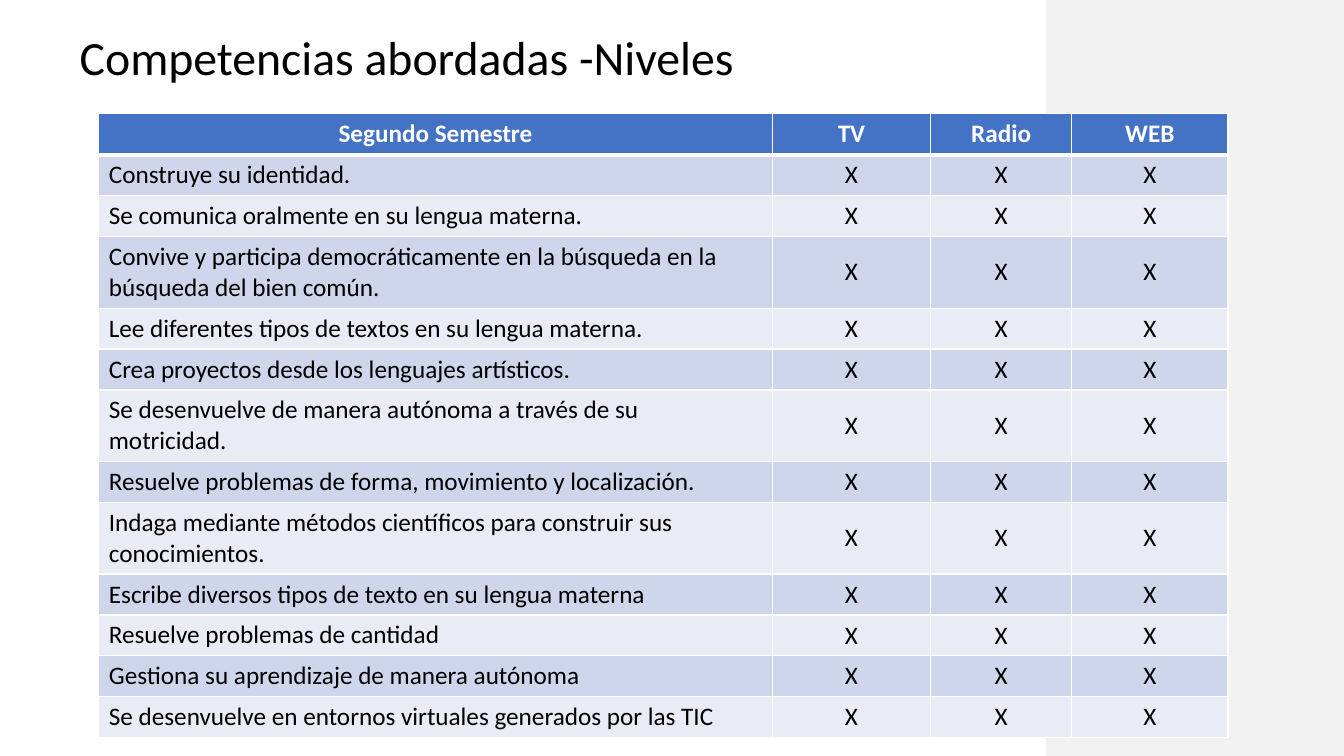
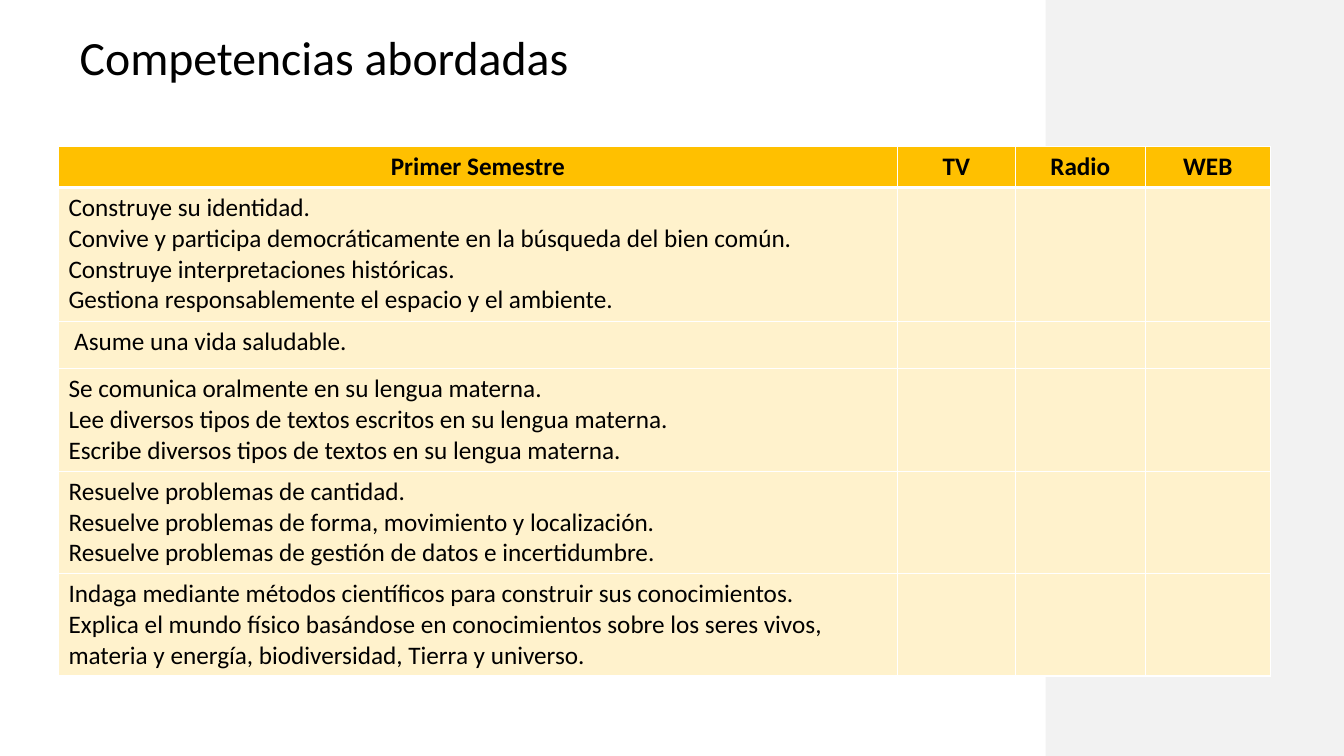
from lxml.etree import SubElement
from pptx import Presentation
from pptx.dml.color import RGBColor
from pptx.enum.shapes import MSO_SHAPE
from pptx.enum.text import MSO_ANCHOR, MSO_AUTO_SIZE, PP_ALIGN
from pptx.oxml.ns import qn
from pptx.util import Inches, Pt

# Shared look
FONT = "Calibri"
BLACK, WHITE, GREY = "000000", "FFFFFF", "F2F2F2"
BAND = (10.37, 0, 2.96, 7.5)
TITLE = (0.69, 0.36, 11.5, 0.53)
MEDIA = ["TV", "Radio", "WEB"]

# Second semester: one skill a row, all marked
SECOND = [
    "Construye su identidad.",
    "Se comunica oralmente en su lengua materna.",
    "Convive y participa democráticamente en la búsqueda en la búsqueda del bien común.",
    "Lee diferentes tipos de textos en su lengua materna.",
    "Crea proyectos desde los lenguajes artísticos.",
    "Se desenvuelve de manera autónoma a través de su motricidad.",
    "Resuelve problemas de forma, movimiento y localización.",
    "Indaga mediante métodos científicos para construir sus conocimientos.",
    "Escribe diversos tipos de texto en su lengua materna",
    "Resuelve problemas de cantidad",
    "Gestiona su aprendizaje de manera autónoma",
    "Se desenvuelve en entornos virtuales generados por las TIC",
]

# First semester: skills grouped by area, no marks
FIRST = [
    ["Construye su identidad.",
     "Convive y participa democráticamente en la búsqueda del bien común.",
     "Construye interpretaciones históricas.",
     "Gestiona responsablemente el espacio y el ambiente."],
    [" Asume una vida saludable."],
    ["Se comunica oralmente en su lengua materna.",
     "Lee diversos tipos de textos escritos en su lengua materna.",
     "Escribe diversos tipos de textos en su lengua materna."],
    ["Resuelve problemas de cantidad.",
     "Resuelve problemas de forma, movimiento y localización.",
     "Resuelve problemas de gestión de datos e incertidumbre."],
    ["Indaga mediante métodos científicos para construir sus conocimientos.",
     "Explica el mundo físico basándose en conocimientos sobre los seres vivos, "
     "materia y energía, biodiversidad, Tierra y universo."],
]


def paint(target, color):
    """Fill a shape or a cell."""
    target.fill.solid()
    target.fill.fore_color.rgb = RGBColor.from_string(color)


def write(par, text, size, color=BLACK, bold=False, align=PP_ALIGN.LEFT):
    par.alignment = align
    run = par.add_run()
    run.text = text
    font = run.font
    font.name, font.size, font.bold = FONT, Pt(size), bold
    font.color.rgb = RGBColor.from_string(color)


def border(cell, top, bottom):
    """White cell borders; top and bottom widths in points."""
    props = cell._tc.get_or_add_tcPr()
    sides = [("lnL", 1), ("lnR", 1), ("lnT", top), ("lnB", bottom)]
    for spot, (side, width) in enumerate(sides):
        line = SubElement(props, qn(f"a:{side}"), w=str(Pt(width)))
        fill = SubElement(line, qn("a:solidFill"))
        SubElement(fill, qn("a:srgbClr"), val=WHITE)
        props.insert(spot, line)


def add_base(deck, title):
    """Slide with the side band and the title."""
    slide = deck.slides.add_slide(deck.slide_layouts[5])
    band = slide.shapes.add_shape(MSO_SHAPE.RECTANGLE, *map(Inches, BAND))
    band.shadow.inherit = False
    paint(band, GREY)
    band.line.fill.background()

    head = slide.shapes.title
    head.left, head.top, head.width, head.height = map(Inches, TITLE)
    band._element.getparent().insert(2, band._element)  # band goes behind
    frame = head.text_frame
    frame.word_wrap = True
    frame.auto_size = MSO_AUTO_SIZE.NONE
    frame.vertical_anchor = MSO_ANCHOR.MIDDLE
    par = frame.paragraphs[0]
    par.line_spacing = 0.7
    write(par, title, 34.1)
    return slide


def add_grid(slide, left, top, widths, heights, head, rows, mark, look):
    """Table of skills; look holds head fill, head ink and row fills."""
    tone, ink, fills = look
    box = map(Inches, (left, top, sum(widths), sum(heights)))
    table = slide.shapes.add_table(len(heights), len(widths), *box).table
    for col, width in zip(table.columns, widths):
        col.width = Inches(width)
    for row, height in zip(table.rows, heights):
        row.height = Inches(height)

    # Header row
    for cell, text in zip(table.rows[0].cells, [head] + MEDIA):
        paint(cell, tone)
        border(cell, 1, 3)
        write(cell.text_frame.paragraphs[0], text, 18, ink, True, PP_ALIGN.CENTER)

    # Skill rows
    for num, lines in enumerate(rows, 1):
        for col, cell in enumerate(table.rows[num].cells):
            paint(cell, fills[(num - 1) % len(fills)])
            border(cell, 3 if num == 1 else 1, 1)
            frame = cell.text_frame
            if col == 0:
                for spot, text in enumerate(lines):
                    par = frame.add_paragraph() if spot else frame.paragraphs[0]
                    write(par, text, 18)
            elif mark:
                cell.vertical_anchor = MSO_ANCHOR.MIDDLE
                write(frame.paragraphs[0], mark, 18, align=PP_ALIGN.CENTER)


def main():
    deck = Presentation()
    deck.slide_width, deck.slide_height = Inches(13.33), Inches(7.5)

    slide = add_base(deck, "Competencias abordadas -Niveles")
    add_grid(slide, 0.98, 1.13, [6.68, 1.57, 1.4, 1.55],
             [0.39] * (len(SECOND) + 1), "Segundo Semestre",
             [[text] for text in SECOND], "X",
             ("4472C4", WHITE, ["CFD5EA", "E9EBF5"]))

    slide = add_base(deck, "Competencias abordadas")
    add_grid(slide, 0.58, 1.45, [8.32, 1.17, 1.29, 1.24],
             [0.41, 1.33, 0.47, 1.01, 1.01, 1.01], "Primer Semestre",
             FIRST, "", ("FFC000", BLACK, ["FFF2CC"]))

    deck.save("out.pptx")


if __name__ == "__main__":
    main()
